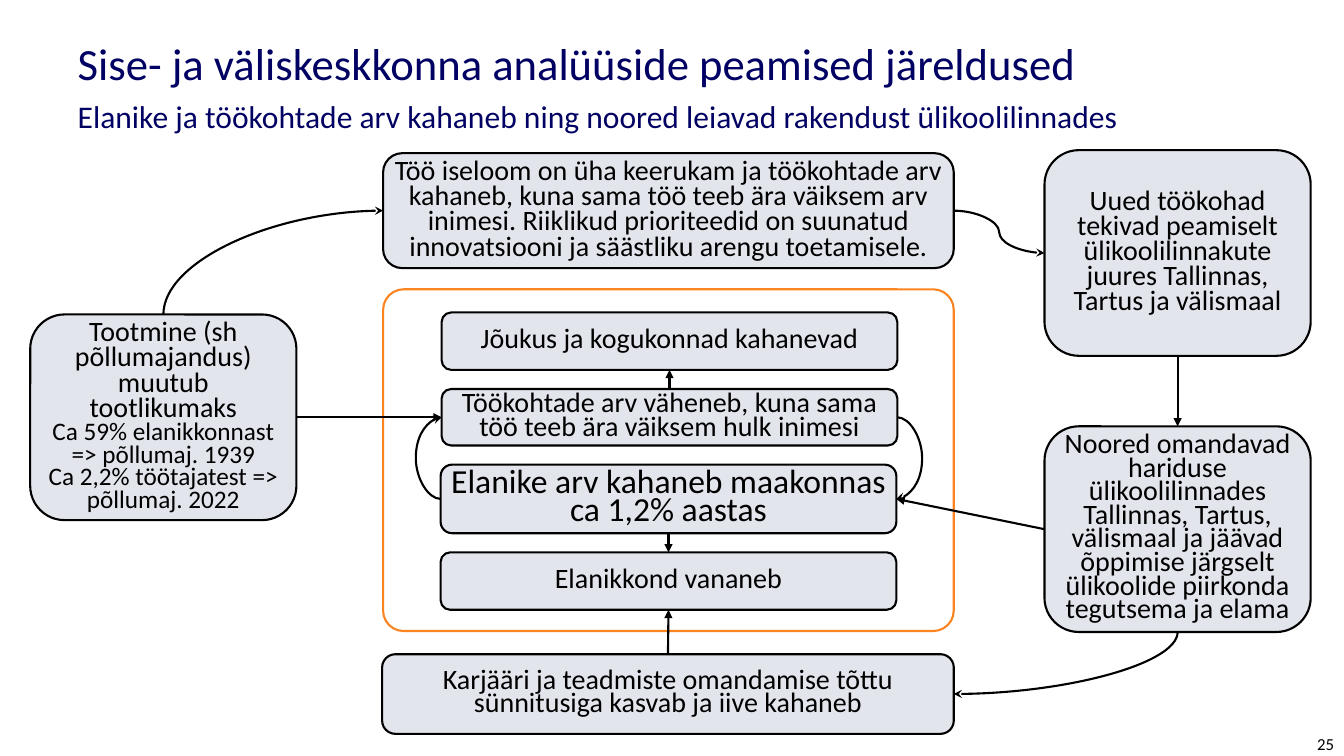
from dataclasses import dataclass
from typing import Any

from lxml import etree
from pptx import Presentation
from pptx import util as u
from pptx.dml.color import RGBColor
from pptx.enum import shapes, text
from pptx.oxml import ns

PX = 9144
TOP, LEFT, BOTTOM, RIGHT = range(4)


@dataclass(frozen=True)
class Theme:
    font: str = "Calibri"
    ink: RGBColor = RGBColor(0x00, 0x00, 0x00)
    heading: RGBColor = RGBColor(0x01, 0x01, 0x63)
    panel: RGBColor = RGBColor(0xE0, 0xE3, 0xEC)
    accent: RGBColor = RGBColor(0xFB, 0x84, 0x21)
    panel_alpha: int = 90000
    title_size: float = 31.9
    subtitle_size: float = 22.5
    key_size: float = 24
    box_size: float = 20
    detail_size: float = 18
    number_size: float = 12
    line_width: float = 1.5


THEME = Theme()


@dataclass(frozen=True)
class Line:
    words: str
    size: float = THEME.box_size


@dataclass(frozen=True)
class Box:
    key: str
    frame: tuple[int, int, int, int]
    lines: tuple[Line, ...]
    spacing: float = 0.7


@dataclass(frozen=True)
class Link:
    start: str
    start_side: int
    end: str
    end_side: int
    preset: str = "line"
    adjust: int | None = None
    turned: bool = False


BOXES = (
    Box("work", (380, 152, 566, 114), (Line(
        "Töö iseloom on üha keerukam ja töökohtade arv kahaneb, kuna sama töö teeb ära väiksem arv "
        "inimesi. Riiklikud prioriteedid on suunatud innovatsiooni ja säästliku arengu toetamisele."),), 0.75),
    Box("new_jobs", (1036, 149, 264, 204), (Line(
        "Uued töökohad tekivad peamiselt ülikoolilinnakute juures Tallinnas, Tartus ja välismaal"),), 0.75),
    Box("youth", (1036, 423, 264, 204), (Line(
        "Noored omandavad hariduse ülikoolilinnades Tallinnas, Tartus, välismaal ja jäävad õppimise "
        "järgselt ülikoolide piirkonda tegutsema ja elama"),)),
    Box("career", (379, 649, 567, 79), (Line(
        "Karjääri ja teadmiste omandamise tõttu sünnitusiga kasvab ja iive kahaneb"),)),
    Box("jobs", (438, 386, 452, 56), (Line(
        "Töökohtade arv väheneb, kuna sama töö teeb ära väiksem hulk inimesi"),)),
    Box("wealth", (438, 310, 452, 57), (Line("Jõukus ja kogukonnad kahanevad"),)),
    Box("population", (437, 461, 452, 68), (Line(
        "Elanike arv kahaneb maakonnas ca 1,2% aastas", THEME.key_size),)),
    Box("ageing", (437, 548, 452, 57), (Line("Elanikkond vananeb"),)),
    Box("production", (30, 312, 264, 204), (
        Line("Tootmine (sh põllumajandus) muutub tootlikumaks"),
        Line("Ca 59% elanikkonnast => põllumaj. 1939", THEME.detail_size),
        Line("Ca 2,2% töötajatest => põllumaj. 2022", THEME.detail_size)), 0.75),
)

LINKS = (
    Link("production", TOP, "work", LEFT, "curvedConnector2", turned=True),
    Link("new_jobs", BOTTOM, "youth", TOP),
    Link("jobs", TOP, "wealth", BOTTOM),
    Link("population", BOTTOM, "ageing", TOP),
    Link("work", RIGHT, "new_jobs", LEFT, "curvedConnector3", 50000),
    Link("youth", BOTTOM, "career", RIGHT, "curvedConnector2", turned=True),
    Link("population", LEFT, "jobs", LEFT, "curvedConnector3", -2500000),
    Link("jobs", RIGHT, "population", RIGHT, "curvedConnector3", -2500000),
    Link("youth", LEFT, "population", RIGHT),
    Link("production", RIGHT, "jobs", LEFT),
    Link("career", TOP, "ageing", BOTTOM),
)


def apply(target: Any, values: dict[str, Any]) -> None:
    for name, value in values.items():
        setattr(target, name, value)


def scaled(frame: tuple[int, int, int, int]) -> tuple[int, ...]:
    return tuple(value * PX for value in frame)


def style_font(font: Any, size: float, color: RGBColor) -> None:
    apply(font, {"name": THEME.font, "size": u.Pt(size), "bold": False})
    font.color.rgb = color


def style_line(line: Any, color: RGBColor) -> None:
    line.color.rgb = color
    line.width = u.Pt(THEME.line_width)


def draw_box(slide: Any, box: Box) -> Any:
    shape = slide.shapes.add_shape(shapes.MSO_SHAPE.FLOWCHART_ALTERNATE_PROCESS, *scaled(box.frame))
    shape.shadow.inherit = False
    shape.fill.solid()
    shape.fill.fore_color.rgb = THEME.panel
    color = shape._element.spPr.find(".//" + ns.qn("a:srgbClr"))
    etree.SubElement(color, ns.qn("a:alpha"), val=str(THEME.panel_alpha))
    style_line(shape.line, THEME.ink)
    frame = shape.text_frame
    apply(frame, {"word_wrap": True, "vertical_anchor": text.MSO_ANCHOR.MIDDLE})
    apply(frame, {f"margin_{side}": 2 * PX for side in ("left", "top", "right", "bottom")})
    for index, line in enumerate(box.lines):
        paragraph = frame.add_paragraph() if index else frame.paragraphs[0]
        apply(paragraph, {"alignment": text.PP_ALIGN.CENTER, "line_spacing": box.spacing})
        run = paragraph.add_run()
        run.text = line.words
        style_font(run.font, line.size, THEME.ink)
    return shape


def draw_group_frame(slide: Any) -> None:
    shape = slide.shapes.add_shape(shapes.MSO_SHAPE.ROUNDED_RECTANGLE, *scaled((380, 287, 566, 339)))
    shape.adjustments[0] = 0.06
    shape.shadow.inherit = False
    shape.fill.background()
    style_line(shape.line, THEME.accent)


def turn(connector: Any) -> None:
    x1, y1, x2, y2 = connector.begin_x, connector.begin_y, connector.end_x, connector.end_y
    center_x, center_y = (x1 + x2) // 2, (y1 + y2) // 2
    apply(connector, {
        "begin_x": center_x + y1 - center_y, "begin_y": center_y - x1 + center_x,
        "end_x": center_x + y2 - center_y, "end_y": center_y - x2 + center_x})
    connector._element.spPr.find(ns.qn("a:xfrm")).set("rot", "5400000")


def draw_link(slide: Any, link: Link, drawn: dict[str, Any]) -> None:
    straight = link.preset == "line"
    kind = shapes.MSO_CONNECTOR.STRAIGHT if straight else shapes.MSO_CONNECTOR.CURVE
    connector = slide.shapes.add_connector(kind, 0, 0, 0, 0)
    connector.begin_connect(drawn[link.start], link.start_side)
    connector.end_connect(drawn[link.end], link.end_side)
    if link.turned:
        turn(connector)
    style_line(connector.line, THEME.ink)
    properties = connector._element.spPr
    geometry = properties.find(ns.qn("a:prstGeom"))
    geometry.set("prst", link.preset)
    if link.adjust is not None:
        guides = geometry.find(ns.qn("a:avLst"))
        etree.SubElement(guides, ns.qn("a:gd"), name="adj1", fmla=f"val {link.adjust}")
    head = "triangle" if straight else "stealth"
    etree.SubElement(properties.find(ns.qn("a:ln")), ns.qn("a:tailEnd"), type=head)
    etree.SubElement(properties, ns.qn("a:effectLst"))


def draw_title(slide: Any) -> None:
    title = slide.shapes.title
    apply(title, dict(zip(("left", "top", "width", "height"), scaled((67, 17, 1202, 125)))))
    frame = title.text_frame
    apply(frame, {"word_wrap": True, "auto_size": text.MSO_AUTO_SIZE.NONE,
                  "vertical_anchor": text.MSO_ANCHOR.MIDDLE})
    paragraph = frame.paragraphs[0]
    apply(paragraph, {"alignment": text.PP_ALIGN.LEFT, "line_spacing": 1.2})
    heading = paragraph.add_run()
    heading.text = "Sise- ja väliskeskkonna analüüside peamised järeldused"
    style_font(heading.font, THEME.title_size, THEME.heading)
    paragraph.add_line_break()
    subtitle = paragraph.add_run()
    subtitle.text = "Elanike ja töökohtade arv kahaneb ning noored leiavad rakendust ülikoolilinnades"
    style_font(subtitle.font, THEME.subtitle_size, THEME.heading)


def draw_page_number(slide: Any) -> None:
    frame = slide.shapes.add_textbox(*scaled((1171, 725, 162, 25))).text_frame
    apply(frame, {"word_wrap": True, "vertical_anchor": text.MSO_ANCHOR.MIDDLE,
                  "margin_top": 0, "margin_bottom": 0})
    paragraph = frame.paragraphs[0]
    paragraph.alignment = text.PP_ALIGN.RIGHT
    run = paragraph.add_run()
    run.text = "25"
    style_font(run.font, THEME.number_size, THEME.ink)


def main() -> None:
    presentation = Presentation()
    apply(presentation, {"slide_width": 1333 * PX, "slide_height": 750 * PX})
    slide = presentation.slides.add_slide(presentation.slide_layouts[5])
    draw_title(slide)
    drawn = {box.key: draw_box(slide, box) for box in BOXES}
    draw_group_frame(slide)
    for link in LINKS:
        draw_link(slide, link, drawn)
    draw_page_number(slide)
    presentation.save("out.pptx")


if __name__ == "__main__":
    main()
